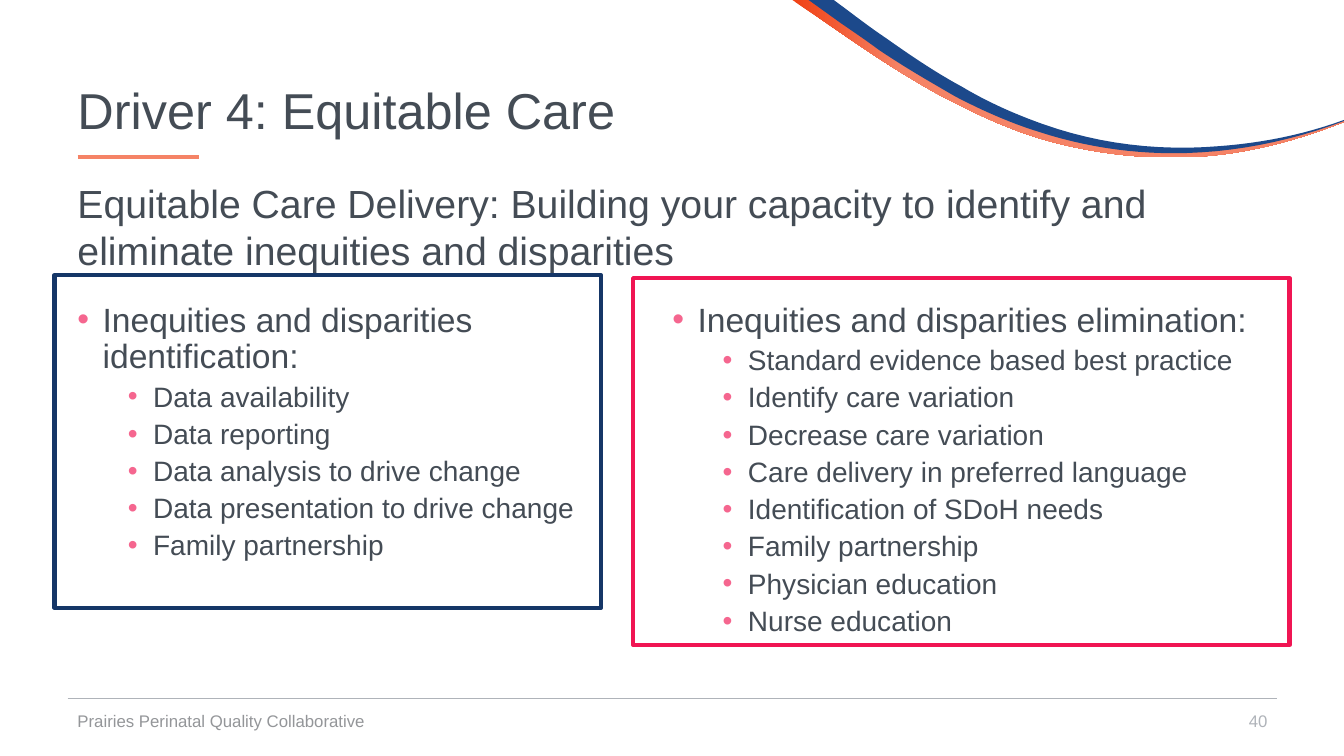
from dataclasses import dataclass
from typing import Optional

from lxml import etree
from pptx import Presentation
from pptx.dml.color import RGBColor
from pptx.enum.shapes import MSO_CONNECTOR, MSO_SHAPE
from pptx.enum.text import MSO_ANCHOR, PP_ALIGN
from pptx.oxml.ns import qn
from pptx.util import Inches, Pt

COLORS = {
    "text": "444C55", "footer": "949699", "number": "AFB3B9", "bullet": "F5668F",
    "orange": "F04115", "coral": "F58366", "blue": "1C498B",
    "navy": "153667", "crimson": "F01553",
}
FONT = "Arial"
CURVE_STEPS = 12


@dataclass
class Area:
    left: float
    top: float
    width: float
    height: float

    def lengths(self) -> list:
        return [Inches(v) for v in (self.left, self.top, self.width, self.height)]


@dataclass
class Label:
    text: str
    area: Area
    size: int
    color: str
    anchor: MSO_ANCHOR = MSO_ANCHOR.MIDDLE
    align: PP_ALIGN = PP_ALIGN.LEFT
    spacing: float = 1.0


@dataclass
class Rule:
    left: float
    right: float
    y: float
    color: str
    weight: float


@dataclass
class Panel:
    frame: Area
    color: str
    text_area: Area
    heading: str
    items: list[str]


@dataclass
class Ribbon:
    """An outline of points (lines) and six-number tuples (cubic curves)."""
    start: tuple
    segments: list[tuple]
    color: str
    end_color: Optional[str] = None


RIBBONS = [
    Ribbon((7.86, 0), [
        (8.05, 0), (8.1, 0.04),
        (8.34, 0.21, 8.58, 0.38, 8.82, 0.54), (9.07, 0.71, 9.32, 0.86, 9.58, 0.99),
        (9.84, 1.13, 10.11, 1.24, 10.39, 1.33), (10.8, 1.46, 11.25, 1.52, 11.68, 1.52),
        (12.23, 1.52, 12.8, 1.4, 13.33, 1.2), (13.33, 1.21),
        (12.8, 1.42, 12.24, 1.56, 11.69, 1.56), (11.24, 1.57, 10.8, 1.51, 10.37, 1.39),
        (10.09, 1.31, 9.81, 1.19, 9.55, 1.06), (9.28, 0.93, 9.03, 0.78, 8.78, 0.62),
        (8.53, 0.46, 8.29, 0.29, 8.04, 0.12),
    ], "orange", "coral"),
    Ribbon((8.02, 0), [
        (8.27, 0), (8.43, 0.12),
        (8.55, 0.21, 8.67, 0.3, 8.79, 0.38), (9.03, 0.55, 9.28, 0.72, 9.54, 0.86),
        (9.79, 1.01, 10.06, 1.13, 10.34, 1.23), (10.9, 1.43, 11.5, 1.5, 12.09, 1.45),
        (12.5, 1.42, 12.92, 1.34, 13.33, 1.19), (13.33, 1.2),
        (12.78, 1.41, 12.2, 1.52, 11.64, 1.52), (11.19, 1.52, 10.74, 1.45, 10.31, 1.31),
        (10.02, 1.22, 9.75, 1.1, 9.48, 0.96), (9.22, 0.81, 8.96, 0.66, 8.71, 0.49),
        (8.59, 0.4, 8.47, 0.32, 8.34, 0.23),
    ], "blue"),
]
RULES = [
    Rule(0.67, 12.67, 6.93, "number", 0.5),
    Rule(0.77, 1.97, 1.56, "coral", 2.5),
]
LABELS = [
    Label("Driver 4: Equitable Care", Area(0.67, 0.4, 12, 1.45), 36, "text", spacing=0.9),
    Label("40", Area(9.67, 6.95, 3, 0.4), 12, "number", align=PP_ALIGN.RIGHT),
    Label("Prairies Perinatal Quality Collaborative", Area(0.67, 6.95, 4.5, 0.4), 12, "footer"),
    Label("Equitable Care Delivery: Building your capacity to identify and "
          "eliminate inequities and disparities",
          Area(0.67, 1.73, 12.12, 1.04), 28, "text", MSO_ANCHOR.TOP),
]
PANELS = [
    Panel(Area(0.54, 2.73, 5.42, 3.3), "navy", Area(0.67, 2.96, 5.4, 3.84),
          "Inequities and disparities identification:",
          ["Data availability", "Data reporting", "Data analysis to drive change",
           "Data presentation to drive change", "Family partnership"]),
    Panel(Area(6.28, 2.76, 6.51, 3.64), "crimson", Area(6.57, 2.96, 6.1, 3.84),
          "Inequities and disparities elimination:",
          ["Standard evidence based best practice", "Identify care variation",
           "Decrease care variation", "Care delivery in preferred language",
           "Identification of SDoH needs", "Family partnership",
           "Physician education", "Nurse education"]),
]


def rgb(name: str) -> RGBColor:
    return RGBColor.from_string(COLORS[name])


def outline_points(ribbon: Ribbon) -> list[tuple]:
    points = [ribbon.start]
    for segment in ribbon.segments:
        if len(segment) == 2:
            points.append(segment)
            continue
        corners = [points[-1], segment[:2], segment[2:4], segment[4:]]
        for step in range(1, CURVE_STEPS + 1):
            t = step / CURVE_STEPS
            weights = ((1 - t) ** 3, 3 * t * (1 - t) ** 2, 3 * t * t * (1 - t), t ** 3)
            points.append(tuple(sum(w * c[axis] for w, c in zip(weights, corners))
                                for axis in (0, 1)))
    return points


def draw_ribbon(page, ribbon: Ribbon) -> None:
    points = [(Inches(x), Inches(y)) for x, y in outline_points(ribbon)]
    builder = page.shapes.build_freeform(*points[0])
    builder.add_line_segments(points[1:], close=True)
    shape = builder.convert_to_shape()
    shape.shadow.inherit = False
    shape.line.fill.background()
    if ribbon.end_color is None:
        shape.fill.solid()
        shape.fill.fore_color.rgb = rgb(ribbon.color)
        return
    shape.fill.gradient()
    shape.fill.gradient_angle = 0
    stops = zip(shape.fill.gradient_stops, (0, 0.2), (ribbon.color, ribbon.end_color))
    for stop, position, color in stops:
        stop.position = position
        stop.color.rgb = rgb(color)


def draw_rule(page, rule: Rule) -> None:
    y = Inches(rule.y)
    line = page.shapes.add_connector(
        MSO_CONNECTOR.STRAIGHT, Inches(rule.left), y, Inches(rule.right), y)
    line.line.color.rgb = rgb(rule.color)
    line.line.width = Pt(rule.weight)
    etree.SubElement(line._element.spPr, qn("a:effectLst"))


def format_font(para, size: int, color: str) -> None:
    for span in para.runs:
        span.font.name = FONT
        span.font.size = Pt(size)
        span.font.color.rgb = rgb(color)


def draw_label(page, label: Label) -> None:
    frame = page.shapes.add_textbox(*label.area.lengths()).text_frame
    frame.word_wrap = True
    frame.vertical_anchor = label.anchor
    frame.text = label.text
    para = frame.paragraphs[0]
    para.alignment = label.align
    para.line_spacing = label.spacing
    format_font(para, label.size, label.color)


def add_bullet(para, indent: float) -> None:
    props = para._p.get_or_add_pPr()
    props.set("marL", str(Inches(indent)))
    props.set("indent", str(Inches(-0.25)))
    color = etree.SubElement(props, qn("a:buClr"))
    etree.SubElement(color, qn("a:srgbClr"), val=COLORS["bullet"])
    etree.SubElement(props, qn("a:buFont"), typeface=FONT)
    etree.SubElement(props, qn("a:buChar"), char="•")


def draw_panel(page, panel: Panel) -> None:
    frame = page.shapes.add_textbox(*panel.text_area.lengths()).text_frame
    frame.word_wrap = True
    frame.text = "\n".join([panel.heading, *panel.items])
    for index, para in enumerate(frame.paragraphs):
        level = min(index, 1)
        para.level = level
        para.line_spacing = 0.9
        para.space_before = Pt((10, 5)[level])
        add_bullet(para, (0.25, 0.75)[level])
        format_font(para, (24, 20)[level], "text")

    border = page.shapes.add_shape(MSO_SHAPE.RECTANGLE, *panel.frame.lengths())
    border.shadow.inherit = False
    border.fill.background()
    border.line.color.rgb = rgb(panel.color)
    border.line.width = Pt(3)


def main() -> None:
    deck = Presentation()
    deck.slide_width, deck.slide_height = Inches(13.33), Inches(7.5)
    page = deck.slides.add_slide(deck.slide_layouts[6])
    # Decoration
    for ribbon in RIBBONS:
        draw_ribbon(page, ribbon)
    for rule in RULES:
        draw_rule(page, rule)
    # Title, subtitle and footer
    for label in LABELS:
        draw_label(page, label)
    # Framed bullet lists
    for panel in PANELS:
        draw_panel(page, panel)
    deck.save("out.pptx")


if __name__ == "__main__":
    main()
